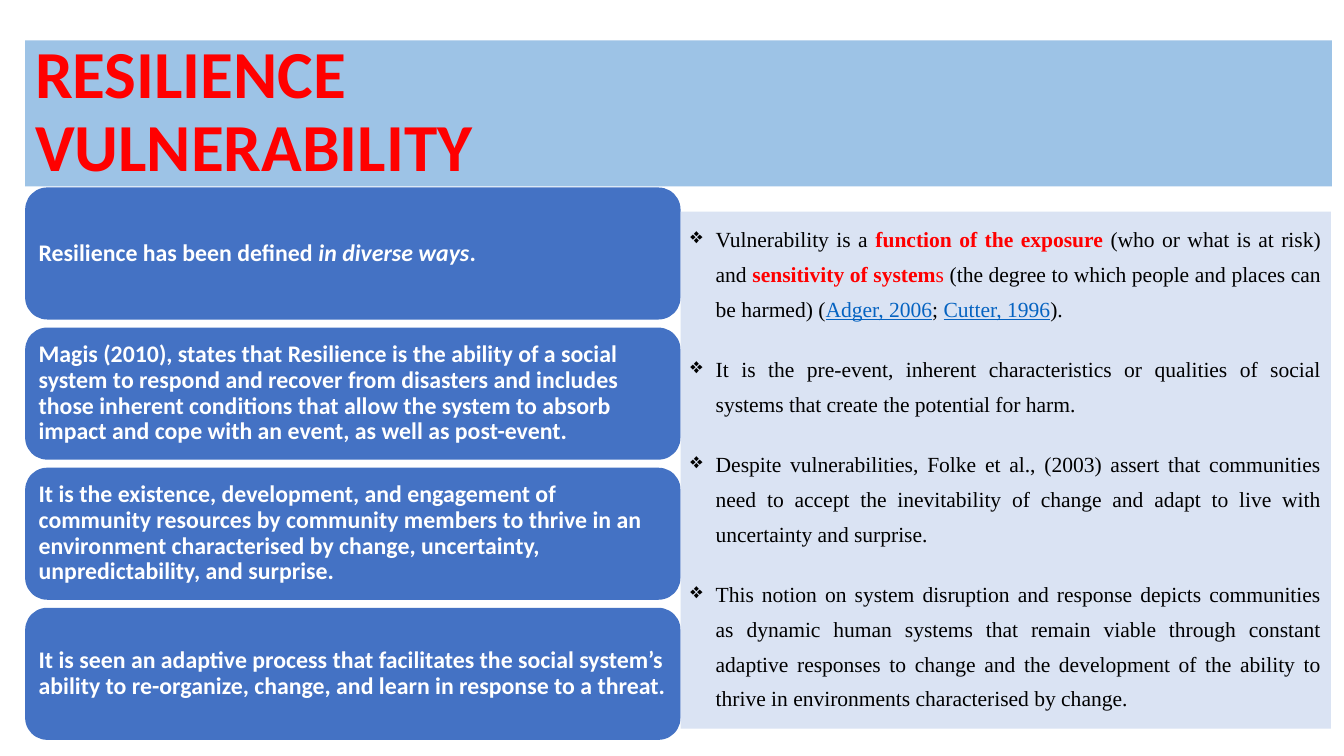
from lxml import etree
from pptx import Presentation
from pptx.dml.color import RGBColor
from pptx.enum.shapes import MSO_SHAPE
from pptx.enum.text import MSO_ANCHOR, PP_ALIGN
from pptx.oxml.ns import qn
from pptx.util import Inches, Pt

RECTANGLE, ROUNDED = MSO_SHAPE.RECTANGLE, MSO_SHAPE.ROUNDED_RECTANGLE
TOP, MIDDLE = MSO_ANCHOR.TOP, MSO_ANCHOR.MIDDLE
LEFT, JUSTIFY = PP_ALIGN.LEFT, PP_ALIGN.JUSTIFY
RED, WHITE, BLACK, LINK = "FF0000", "FFFFFF", "000000", "0563C1"

DEFINITIONS = [
    [("Resilience has been defined ", False), ("in diverse ways", True), (".", False)],
    [("Magis (2010), states that Resilience is the ability of a social system to "
      "respond and recover from disasters and includes those inherent conditions that "
      "allow the system to absorb impact and cope with an event, as well as post-event.",
      False)],
    [("It is the existence, development, and engagement of community resources by "
      "community members to thrive in an environment characterised by change, "
      "uncertainty, unpredictability, and surprise.", False)],
    [("It is seen an adaptive process that facilitates the social system’s ability to "
      "re-organize, change, and learn in response to a threat.", False)],
]

VULNERABILITY_POINTS = [
    [("Vulnerability is a ", "plain"), ("function of the exposure ", "key"),
     ("(who or what is at risk) and ", "plain"), ("sensitivity of system", "key"),
     ("s ", "red"),
     ("(the degree to which people and places can be harmed) (", "plain"),
     ("Adger, 2006", "citation"), ("; ", "plain"), ("Cutter, 1996", "citation"),
     (").", "plain")],
    [("It is the pre-event, inherent characteristics or qualities of social systems "
      "that create the potential for harm.", "plain")],
    [("Despite vulnerabilities, Folke et al., (2003) assert that communities need to "
      "accept the inevitability of change and adapt to live with uncertainty and "
      "surprise.", "plain")],
    [("This notion on system disruption and response depicts communities as dynamic "
      "human systems that remain viable through constant adaptive responses to change "
      "and the development of the ability to thrive in environments characterised by "
      "change.", "plain")],
]
SPAN_COLORS = {"plain": BLACK, "key": RED, "red": RED, "citation": LINK}


def color(value):
    """Turn a hex string into a colour."""
    return RGBColor.from_string(value)


def add_panel(page, kind, box, fill, anchor):
    """Add a filled, borderless shape and return it."""
    panel = page.shapes.add_shape(kind, *(Inches(length) for length in box))
    panel.shadow.inherit = False
    panel.fill.solid()
    panel.fill.fore_color.rgb = color(fill)
    panel.line.fill.background()
    panel.text_frame.word_wrap = True
    panel.text_frame.vertical_anchor = anchor
    return panel


def style_paragraph(para, font, size, align, spacing):
    """Set the font, size, alignment and line spacing of a paragraph."""
    para.font.name = font
    para.font.size = Pt(size)
    para.alignment = align
    para.line_spacing = spacing


def add_bullet(para, symbol, indent):
    """Give a paragraph a hanging bullet."""
    properties = para._p.get_or_add_pPr()
    properties.set("marL", str(Inches(indent)))
    properties.set("indent", str(-Inches(indent)))
    bullet = etree.SubElement(properties, qn("a:buChar"))
    bullet.set("char", symbol)
    properties.insert_element_before(bullet, "a:tabLst", "a:defRPr", "a:extLst")


def add_title(page, box):
    """Place the title band."""
    band = add_panel(page, RECTANGLE, box, "9DC3E6", MIDDLE)
    para = band.text_frame.paragraphs[0]
    para.text = "RESILIENCE\vVULNERABILITY"
    style_paragraph(para, "Calibri", 48, LEFT, 0.9)
    para.font.bold = True
    para.font.color.rgb = color(RED)


def add_definitions(page, box, gap=0.08):
    """Stack the definition cards evenly in the box."""
    left, top, width, height = box
    pitch = (height + gap) / len(DEFINITIONS)
    for row, spans in enumerate(DEFINITIONS):
        card_box = (left, top + row * pitch, width, pitch - gap)
        card = add_panel(page, ROUNDED, card_box, "4472C4", MIDDLE)
        frame = card.text_frame
        frame.margin_left = frame.margin_right = Inches(0.07)
        frame.margin_top = frame.margin_bottom = Inches(0.07)
        para = frame.paragraphs[0]
        style_paragraph(para, "Calibri", 17, LEFT, 0.9)
        para.font.bold = True
        para.font.color.rgb = color(WHITE)
        for text, italic in spans:
            span = para.add_run()
            span.text = text
            span.font.italic = italic


def add_vulnerability(page, box):
    """Place the bulleted vulnerability panel."""
    frame = add_panel(page, RECTANGLE, box, "DAE3F3", TOP).text_frame
    for index, spans in enumerate(VULNERABILITY_POINTS):
        para = frame.add_paragraph() if index else frame.paragraphs[0]
        style_paragraph(para, "Times New Roman", 15.4, JUSTIFY, 1.35)
        para.font.color.rgb = color(BLACK)
        para.space_before = Pt(10)
        para.space_after = Pt(8)
        add_bullet(para, "❖", 0.25)
        for text, role in spans:
            span = para.add_run()
            span.text = text
            span.font.color.rgb = color(SPAN_COLORS[role])
            span.font.bold = role == "key"
            span.font.underline = role == "citation"


def main():
    """Build and save the slide."""
    deck = Presentation()
    deck.slide_width, deck.slide_height = Inches(13.33), Inches(7.5)
    page = deck.slides.add_slide(deck.slide_layouts[6])
    add_title(page, (0.25, 0.4, 12.96, 1.45))
    add_definitions(page, (0.25, 1.86, 6.5, 5.48))
    add_vulnerability(page, (6.75, 2.1, 6.45, 5.13))
    deck.save("out.pptx")


if __name__ == "__main__":
    main()
